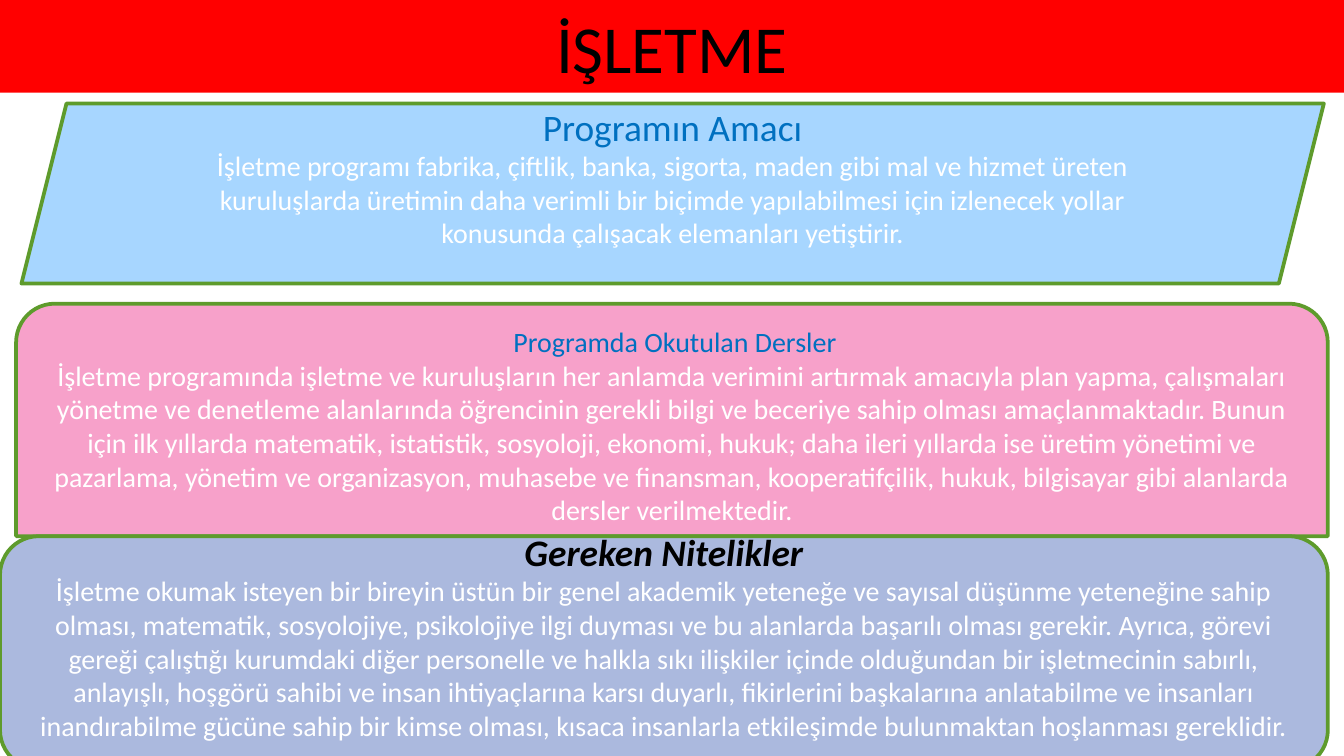
from pptx import Presentation
from pptx.dml.color import RGBColor
from pptx.enum.shapes import MSO_SHAPE
from pptx.enum.text import MSO_ANCHOR, PP_ALIGN
from pptx.util import Inches, Pt

RECTANGLE = MSO_SHAPE.RECTANGLE
PARALLELOGRAM = MSO_SHAPE.PARALLELOGRAM
ROUND_TOP = MSO_SHAPE.ROUND_2_SAME_RECTANGLE
ROUNDED = MSO_SHAPE.ROUNDED_RECTANGLE
MIDDLE = MSO_ANCHOR.MIDDLE
CENTER = PP_ALIGN.CENTER

WIDTH = 10
HEIGHT = WIDTH * 9 / 16
FONT = "Calibri"
BODY_SIZE = 15
LINE_HEIGHT = 0.25  # one line of body text, in inches
COLORS = {
    "title_bar": "FF0000",
    "purpose": "A7D6FF",
    "courses": "F7A1CA",
    "qualities": "ABB9DE",
    "outline": "5E9B2C",
    "heading": "0070C0",
    "black": "000000",
    "white": "FFFFFF",
}

PURPOSE = (
    "İşletme programı fabrika, çiftlik, banka, sigorta, maden gibi mal ve hizmet "
    "üreten kuruluşlarda üretimin daha verimli bir biçimde yapılabilmesi için "
    "izlenecek yollar konusunda çalışacak elemanları yetiştirir."
)
COURSES = (
    "İşletme programında işletme ve kuruluşların her anlamda verimini artırmak "
    "amacıyla plan yapma, çalışmaları yönetme ve denetleme alanlarında öğrencinin "
    "gerekli bilgi ve beceriye sahip olması amaçlanmaktadır. Bunun için ilk yıllarda "
    "matematik, istatistik, sosyoloji, ekonomi, hukuk; daha ileri yıllarda ise üretim "
    "yönetimi ve pazarlama, yönetim ve organizasyon, muhasebe ve finansman, "
    "kooperatifçilik, hukuk, bilgisayar gibi alanlarda dersler verilmektedir."
)
QUALITIES = (
    "İşletme okumak isteyen bir bireyin üstün bir genel akademik yeteneğe ve sayısal "
    "düşünme yeteneğine sahip olması, matematik, sosyolojiye, psikolojiye ilgi duyması "
    "ve bu alanlarda başarılı olması gerekir. Ayrıca, görevi gereği çalıştığı kurumdaki "
    "diğer personelle ve halkla sıkı ilişkiler içinde olduğundan bir işletmecinin "
    "sabırlı, anlayışlı, hoşgörü sahibi ve insan ihtiyaçlarına karsı duyarlı, "
    "fikirlerini başkalarına anlatabilme ve insanları inandırabilme gücüne sahip bir "
    "kimse olması, kısaca insanlarla etkileşimde bulunmaktan hoşlanması gereklidir."
)


def color(name):
    return RGBColor.from_string(COLORS[name])


def add_block(slide, kind, box, fill, outlined=True):
    """Add a filled shape; box is left, top, width, height in inches."""
    shape = slide.shapes.add_shape(kind, *(Inches(length) for length in box))
    shape.shadow.inherit = False
    shape.fill.solid()
    shape.fill.fore_color.rgb = color(fill)
    if outlined:
        shape.line.color.rgb = color("outline")
        shape.line.width = Pt(2)
    else:
        shape.line.fill.background()
    shape.text_frame.word_wrap = True
    shape.text_frame.vertical_anchor = MIDDLE
    return shape


def add_run(paragraph, text, size, color_name, emphasis=False):
    paragraph.alignment = CENTER
    run = paragraph.add_run()
    run.text = text
    run.font.name = FONT
    run.font.size = Pt(size)
    run.font.bold = run.font.italic = emphasis
    run.font.color.rgb = color(color_name)


def add_title(slide, text):
    bar = add_block(slide, RECTANGLE, (0, 0, WIDTH, 0.69), "title_bar", outlined=False)
    add_run(bar.text_frame.paragraphs[0], text, 36, "black")


def add_panel(slide, kind, box, fill, heading, body, lines_below=0):
    """Add a panel with a heading (text, size, colour, emphasis) over its body."""
    frame = add_block(slide, kind, box, fill).text_frame
    frame.margin_bottom = Inches(0.05 + lines_below * LINE_HEIGHT)
    add_run(frame.paragraphs[0], *heading)
    add_run(frame.add_paragraph(), body, BODY_SIZE, "white")


def main():
    presentation = Presentation()
    presentation.slide_width = Inches(WIDTH)
    presentation.slide_height = Inches(HEIGHT)
    slide = presentation.slides.add_slide(presentation.slide_layouts[6])

    # Title bar
    add_title(slide, "İŞLETME")

    # Purpose of the programme
    add_panel(slide, PARALLELOGRAM, (0.16, 0.77, 9.69, 1.34), "purpose",
              ("Programın Amacı", 20, "heading"), PURPOSE, lines_below=1)

    # Courses, with the required qualities directly underneath
    panel_height = 1.73
    courses_top = 2.26
    add_panel(slide, ROUND_TOP, (0.12, courses_top, 9.76, panel_height), "courses",
              (" Programda Okutulan Dersler", BODY_SIZE, "heading"), COURSES)
    add_panel(slide, ROUNDED, (0, courses_top + panel_height, 9.88, panel_height),
              "qualities", ("Gereken Nitelikler", 20, "black", True), QUALITIES,
              lines_below=1)

    presentation.save("out.pptx")


if __name__ == "__main__":
    main()
